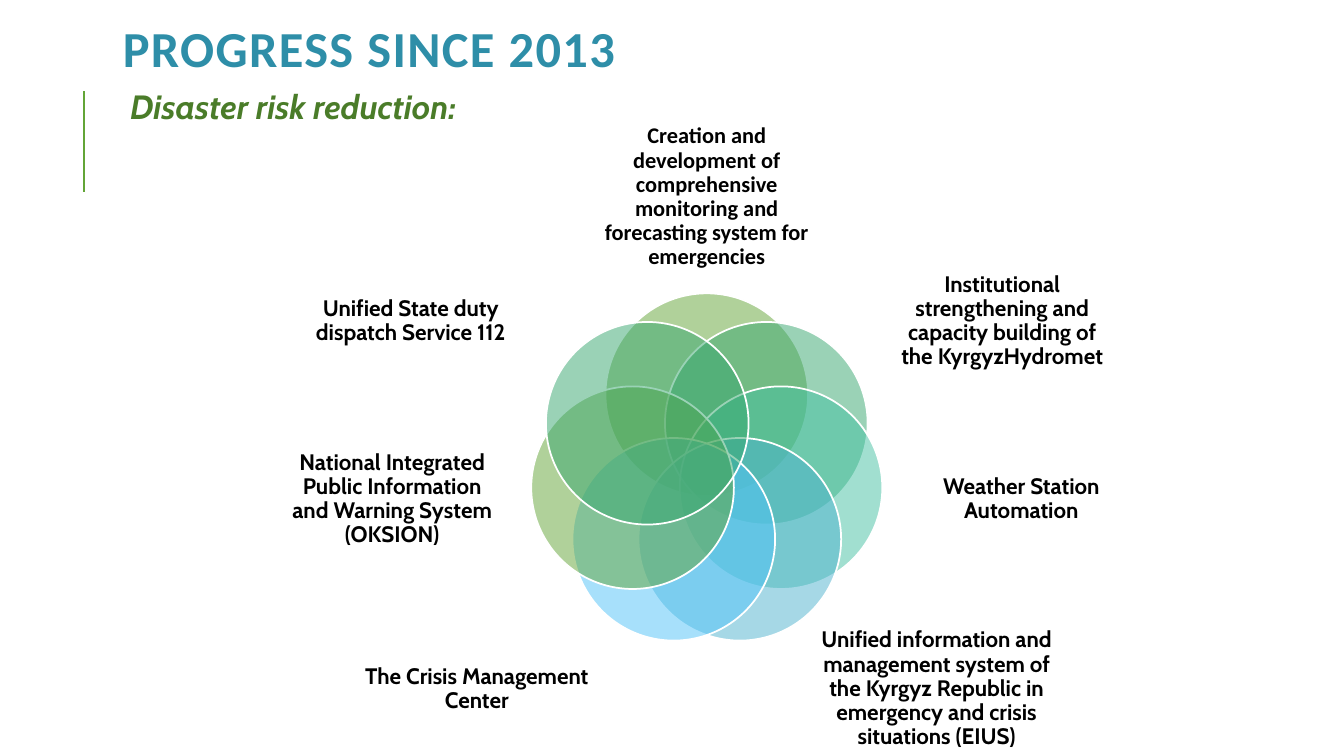
from math import cos, pi, sin

from lxml.etree import SubElement
from pptx import Presentation
from pptx.dml.color import RGBColor
from pptx.enum.shapes import MSO_CONNECTOR as CONNECTOR, MSO_SHAPE as SHAPE
from pptx.enum.text import MSO_ANCHOR as ANCHOR, PP_ALIGN as ALIGN
from pptx.oxml.ns import qn
from pptx.util import Inches, Pt

COLORS = {
    "white": "FFFFFF", "black": "000000", "title": "2E8EA8", "subtitle": "4A7C29",
    "green": "63A537", "emerald": "37A76F", "teal": "44C1A3",
    "blue": "4EB3CF", "sky": "51C3F9",
}

# Clockwise from the top: petal colour, label font, label box, label
MEASURES = [
    ("green", "Calibri", (5.86, 1.34, 2.3, 1.23),
     "Creation and development of comprehensive monitoring and forecasting system for emergencies"),
    ("emerald", "Cabin", (8.85, 2.51, 2.18, 1.36),
     "Institutional strengthening and capacity building of the KyrgyzHydromet"),
    ("teal", "Cabin", (9.06, 4.23, 2.14, 1.45), "Weather Station Automation"),
    ("blue", "Cabin", (8.14, 6.17, 2.3, 1.33),
     "Unified information and management system of the Kyrgyz Republic in "
     "emergency and crisis situations (EIUS)"),
    ("sky", "Cabin", (3.58, 6.17, 2.3, 1.33), "The Crisis Management Center"),
    ("green", "Cabin", (2.82, 4.23, 2.14, 1.45),
     "National Integrated Public Information and Warning System (OKSION)"),
    ("emerald", "Cabin", (2.81, 2.28, 2.53, 1.81), "Unified State duty dispatch Service 112"),
]
FLOWER_X, FLOWER_Y, FLOWER_RADIUS = 7.01, 4.67, 0.755
PETAL_SIZE = 2.01


def rgb(name):
    return RGBColor.from_string(COLORS[name])


class SlideBuilder:
    """Holds the slide and draws elements in its style; lengths are in inches."""

    def __init__(self, slide):
        self.slide = slide
        self.shapes = slide.shapes
        background = slide.background.fill
        background.solid()
        background.fore_color.rgb = rgb("white")

    def text(self, box, wording, size, color, font="Cabin", italic=False,
             align=ALIGN.LEFT, leading=0.9, insets=(0, 0), tracking=0):
        """Add a bold, vertically centred text box."""
        area = self.shapes.add_textbox(*map(Inches, box))
        frame = area.text_frame
        frame.word_wrap = True
        frame.vertical_anchor = ANCHOR.MIDDLE
        frame.margin_left = frame.margin_right = Inches(insets[0])
        frame.margin_top = frame.margin_bottom = Inches(insets[1])
        frame.text = wording
        paragraph = frame.paragraphs[0]
        paragraph.alignment = align
        paragraph.line_spacing = leading
        run = paragraph.runs[0]
        run.font.name = font
        run.font.size = Pt(size)
        run.font.bold = True
        run.font.italic = italic
        run.font.color.rgb = rgb(color)
        if tracking:
            run.font._element.set("spc", str(tracking * 100))
        return area

    def petal(self, center_x, center_y, color):
        """Add a half-transparent circle with a white outline."""
        circle = self.shapes.add_shape(
            SHAPE.OVAL, Inches(center_x - PETAL_SIZE / 2), Inches(center_y - PETAL_SIZE / 2),
            Inches(PETAL_SIZE), Inches(PETAL_SIZE))
        circle.shadow.inherit = False
        circle.fill.solid()
        circle.fill.fore_color.rgb = rgb(color)
        fill_color = circle._element.spPr.find(qn("a:solidFill"))[0]
        SubElement(fill_color, qn("a:alpha"), val="50000")
        circle.line.color.rgb = rgb("white")
        circle.line.width = Pt(1.25)

    def line(self, start, end, color, width):
        rule = self.shapes.add_connector(CONNECTOR.STRAIGHT, *map(Inches, start + end))
        rule.line.color.rgb = rgb(color)
        rule.line.width = Pt(width)
        SubElement(rule._element.spPr, qn("a:effectLst"))


def main():
    deck = Presentation()
    deck.slide_width, deck.slide_height = Inches(13.33), Inches(7.5)
    builder = SlideBuilder(deck.slides.add_slide(deck.slide_layouts[6]))

    builder.line((0.83, 1.9), (0.83, 0.9), "green", 1.5)
    subtitle = builder.text((1.14, 0.82, 11.61, 0.51), "Disaster risk reduction:", 24,
                            "subtitle", italic=True, insets=(0.15, 0.05))
    subtitle.fill.solid()
    subtitle.fill.fore_color.rgb = rgb("white")
    builder.text((1.12, 0.15, 11.25, 0.76), "PROGRESS SINCE 2013", 36, "title",
                 font="Calibri", leading=0.8, insets=(0.1, 0.05), tracking=1)

    for index, (color, font, box, label) in enumerate(MEASURES):
        angle = 2 * pi * index / len(MEASURES)
        builder.petal(FLOWER_X + FLOWER_RADIUS * sin(angle),
                      FLOWER_Y - FLOWER_RADIUS * cos(angle), color)
        builder.text(box, label, 16, "black", font=font, align=ALIGN.CENTER)

    deck.save("out.pptx")


if __name__ == "__main__":
    main()
